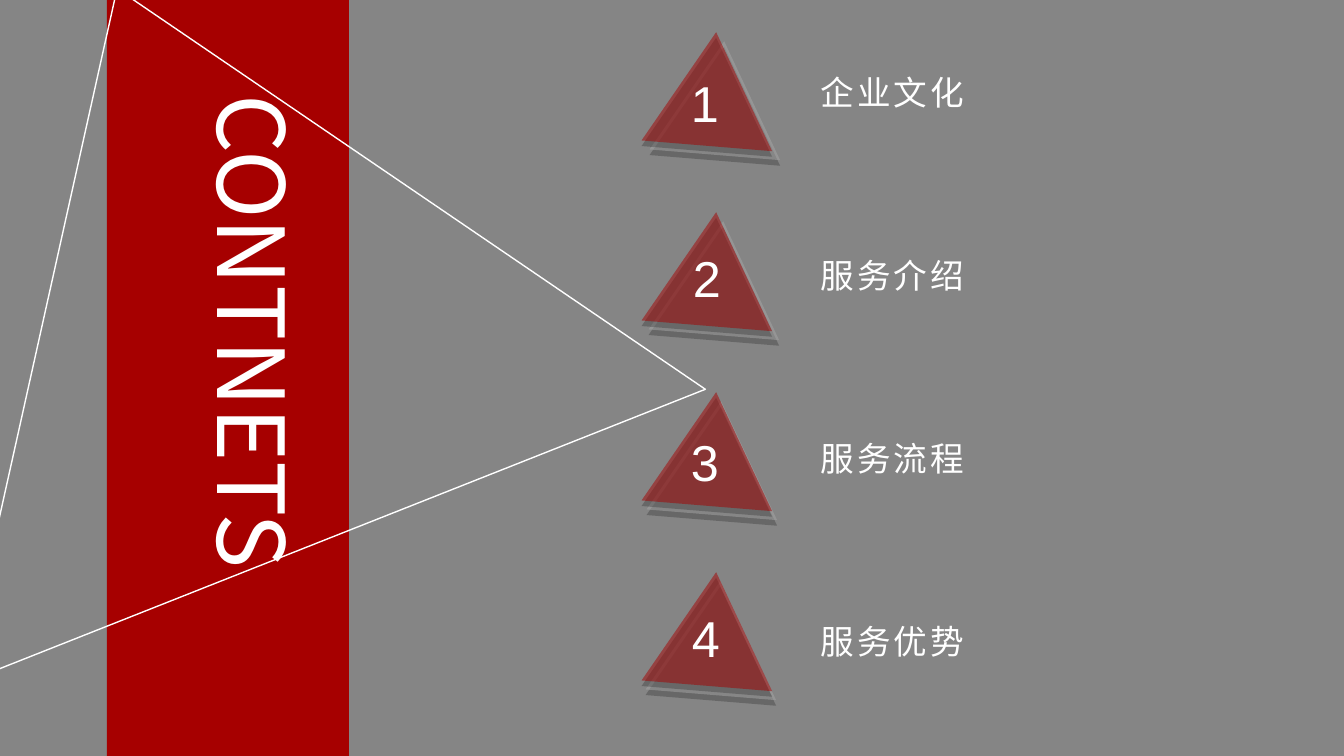
import pptx
import pptx.util
import pptx.dml.color
import pptx.enum.shapes
import pptx.enum.text
import pptx.oxml
import pptx.oxml.ns
import lxml.etree

TITLE = "CONTNETS"
ITEMS = [
    ("1", "企业文化", (681, 67)),
    ("2", "服务介绍", (683, 242)),
    ("3", "服务流程", (681, 426)),
    ("4", "服务优势", (682, 602)),
]
COLORS = {"black": "000000", "red": "A60000", "grey": "A6A6A6", "white": "FFFFFF"}
CJK_FONT = "Noto Sans CJK SC"
W, H = 1344, 756
TRIANGLE_W, TRIANGLE_H, TRIANGLE_TILT = 131, 114, 4.7
ROW_STEP, LABEL_STEP = 180, 183
SHAPE = pptx.enum.shapes.MSO_SHAPE
qn = pptx.oxml.ns.qn


def px(n):
    return pptx.util.Emu(round(n * 914400 / 100.8))


def rgb(name):
    return pptx.dml.color.RGBColor.from_string(COLORS[name])


def add_shape(shapes, kind, x, y, w, h, fill=None, opacity=100, tilt=0):
    sp = shapes.add_shape(kind, px(x), px(y), px(w), px(h))
    sp.rotation = tilt
    sp.shadow.inherit = False
    sp.line.fill.background()
    if fill is None:
        sp.fill.background()
        return sp
    sp.fill.solid()
    sp.fill.fore_color.rgb = rgb(fill)
    if opacity < 100:
        color = sp.element.spPr.find(qn("a:solidFill"))[0]
        lxml.etree.SubElement(color, qn("a:alpha"), val=str(opacity * 1000))
    return sp


def add_triangle(shapes, x, y, fill):
    sp = add_shape(shapes, SHAPE.ISOSCELES_TRIANGLE, x, y, TRIANGLE_W, TRIANGLE_H,
                   fill, 50, TRIANGLE_TILT)
    effects = sp.element.spPr.find(qn("a:effectLst"))
    shadow = lxml.etree.SubElement(effects, qn("a:outerShdw"), blurRad="0",
                                   dist=str(pptx.util.Pt(4)), dir="5400000",
                                   algn="t", rotWithShape="0")
    color = lxml.etree.SubElement(shadow, qn("a:srgbClr"), val=COLORS["black"])
    lxml.etree.SubElement(color, qn("a:alpha"), val="43000")


def add_run(p, text, size, font="Arial", spacing=0):
    r = p.add_run()
    r.text = text
    r.font.size = pptx.util.Pt(size)
    r.font.name = font
    r.font.color.rgb = rgb("white")
    rPr = r.font._element
    lxml.etree.SubElement(rPr, qn("a:ea"), typeface=CJK_FONT)
    if spacing:
        rPr.set("spc", str(spacing * 100))


def add_text(shapes, text, x, y, w, h, size, spacing=0):
    sp = shapes.add_textbox(px(x), px(y), px(w), px(h))
    tf = sp.text_frame
    tf.word_wrap = True
    add_run(tf.paragraphs[0], text, size, spacing=spacing)


prs = pptx.Presentation()
prs.slide_width, prs.slide_height = px(W), px(H)
s = prs.slides.add_slide(prs.slide_layouts[5])

add_shape(s.shapes, SHAPE.RECTANGLE, 0, 0, W, H, "black", 48)
add_shape(s.shapes, SHAPE.RECTANGLE, 107, -6, 242, 767, "red")
outline = add_shape(s.shapes, SHAPE.ISOSCELES_TRIANGLE, -174, -32, 799, 589, tilt=338.4)
outline.line.color.rgb = rgb("white")
outline.line.width = pptx.util.Pt(1)

for i, (number, label, (number_x, number_y)) in enumerate(ITEMS):
    group = s.shapes.add_group_shape().shapes
    top = 32 + i * ROW_STEP
    add_triangle(group, round(654 - 1.4 * i), top + 9, "grey")
    add_triangle(group, 646, top, "red")
    add_text(group, number, number_x, number_y, 49, 72, 36)
    add_text(group, label, 811, 67 + i * LABEL_STEP, 430, 50, 24, spacing=2)

title = s.shapes.title
title.left, title.top, title.width, title.height = px(188), px(89), px(132), px(514)
title.element.getparent().append(title.element)
tf = title.text_frame
tf.word_wrap = True
tf.auto_size = pptx.enum.text.MSO_AUTO_SIZE.NONE
tf.vertical_anchor = pptx.enum.text.MSO_ANCHOR.TOP
title.element.txBody.find(qn("a:bodyPr")).set("vert", "eaVert")
p = tf.paragraphs[0]
p.alignment = pptx.enum.text.PP_ALIGN.JUSTIFY
add_run(p, TITLE, 66, CJK_FONT)

prs.save("out.pptx")
